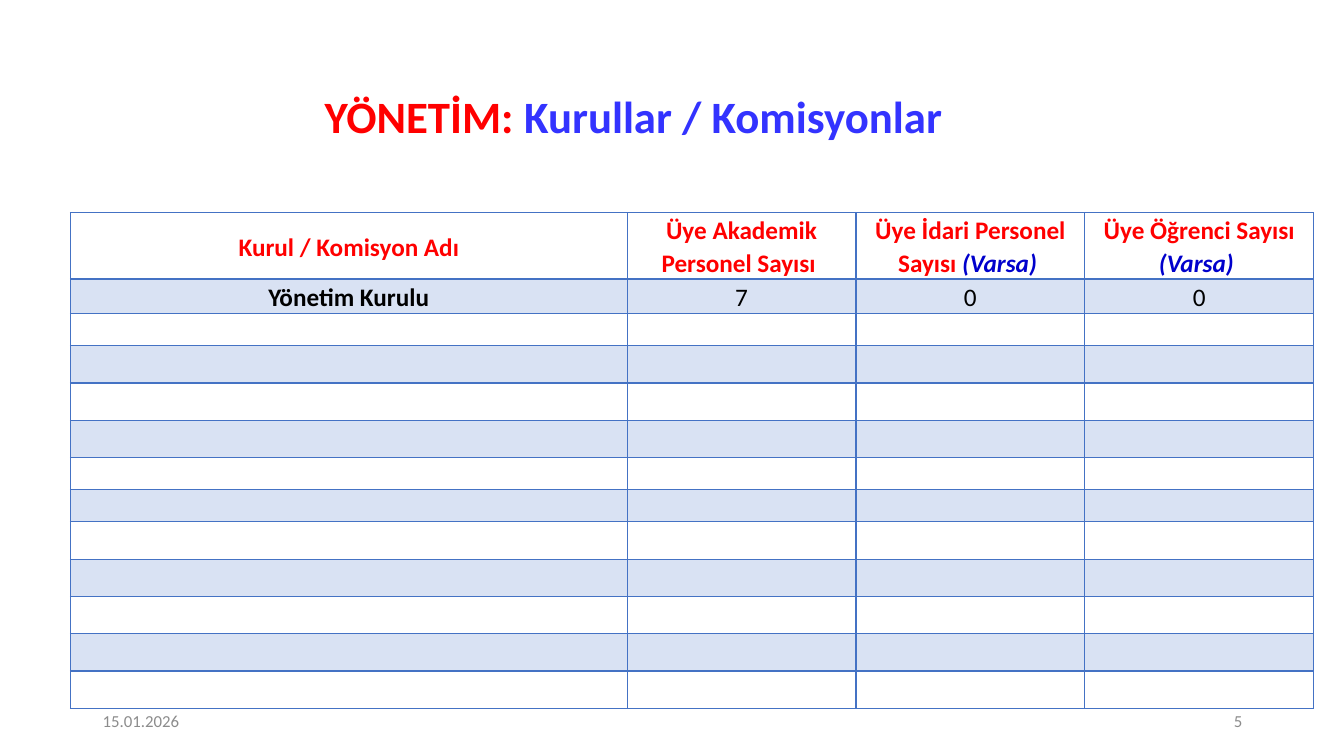
from lxml import etree
from pptx import Presentation
from pptx.dml.color import RGBColor
from pptx.enum import text
from pptx.oxml import ns
from pptx.util import Inches, Pt

RED, BLUE, NAVY, BLACK, GREY = "FF0000", "3333FF", "0000CC", "000000", "8C8C8C"
ACCENT = "4472C4"
CENTER = text.PP_ALIGN.CENTER
MIDDLE = text.MSO_ANCHOR.MIDDLE


def write(paragraph, runs, size, align, spacing=1.0):
    """Fill a paragraph with (wording, colour, bold, italic) runs."""
    paragraph.alignment = align
    paragraph.line_spacing = spacing
    for wording, colour, bold, italic in runs:
        run = paragraph.add_run()
        run.text = wording
        run.font.name = "Calibri"
        run.font.size = Pt(size)
        run.font.bold = bold
        run.font.italic = italic
        run.font.color.rgb = RGBColor.from_string(colour)


def add_border(cell, side, width):
    """Draw one accent-coloured edge of a cell."""
    line = etree.SubElement(cell._tc.get_or_add_tcPr(), ns.qn(f"a:{side}"), w=str(Pt(width)))
    fill = etree.SubElement(line, ns.qn("a:solidFill"))
    etree.SubElement(fill, ns.qn("a:srgbClr"), val=ACCENT)


presentation = Presentation()
presentation.slide_width = Inches(13.33)
presentation.slide_height = Inches(7.5)
slide = presentation.slides.add_slide(presentation.slide_layouts[6])

# Title, date and slide number
title = [("YÖNETİM: ", RED, True, False), ("Kurullar / Komisyonlar", BLUE, True, False)]
date = [("15.01.2026", GREY, False, False)]
number = [("5", GREY, False, False)]
for left, top, width, height, runs, size, align, spacing in [
    (0.7, 0.78, 11.17, 0.8, title, 32, CENTER, 0.9),
    (0.92, 6.95, 3, 0.4, date, 12, text.PP_ALIGN.LEFT, 1.0),
    (9.42, 6.95, 3, 0.4, number, 12, text.PP_ALIGN.RIGHT, 1.0),
]:
    box = slide.shapes.add_textbox(Inches(left), Inches(top), Inches(width), Inches(height))
    box.text_frame.word_wrap = True
    box.text_frame.vertical_anchor = MIDDLE
    write(box.text_frame.paragraphs[0], runs, size, align, spacing)

# Table wording; the remaining rows are left empty for filling in
optional = ("(Varsa) ", NAVY, True, True)
rows = [
    [
        [("Kurul / Komisyon Adı", RED, True, False)],
        [("Üye Akademik Personel Sayısı ", RED, True, False)],
        [("Üye İdari Personel Sayısı ", RED, True, False), optional],
        [("Üye Öğrenci Sayısı ", RED, True, False), optional],
    ],
    [[("Yönetim Kurulu", BLACK, True, False)]]
    + [[(count, BLACK, False, False)] for count in ("7", "0", "0")],
]
column_widths = [5.52, 2.27, 2.27, 2.27]
row_heights = [0.66, 0.34, 0.32] + [0.37] * 3 + [0.32] * 2 + [0.37] * 5

# Table grid
frame = slide.shapes.add_table(
    len(row_heights), len(column_widths), Inches(0.7), Inches(2.11),
    Inches(sum(column_widths)), Inches(sum(row_heights)))
table = frame.table
table.first_row = False
table.horz_banding = False
for column, width in zip(table.columns, column_widths):
    column.width = Inches(width)

# Cells: borders, banding and wording
for row_index, height in enumerate(row_heights):
    table.rows[row_index].height = Inches(height)
    for column_index in range(len(column_widths)):
        cell = table.cell(row_index, column_index)
        cell.vertical_anchor = MIDDLE
        cell.margin_left = cell.margin_right = Inches(0.01 if column_index else 0.05)
        cell.margin_top, cell.margin_bottom = Inches(0.01), 0
        for side in ("lnL", "lnR", "lnT", "lnB"):
            header_edge = (row_index, side) in ((0, "lnB"), (1, "lnT"))
            add_border(cell, side, 2 if header_edge else 1)
        if row_index % 2:
            cell.fill.solid()
            cell.fill.fore_color.rgb = RGBColor.from_string(ACCENT)
            colour = cell._tc.tcPr.find(ns.qn("a:solidFill"))[0]
            etree.SubElement(colour, ns.qn("a:alpha"), val="20000")
        else:
            cell.fill.background()
        paragraph = cell.text_frame.paragraphs[0]
        if row_index < len(rows):
            write(paragraph, rows[row_index][column_index], 18, CENTER, 1.07)
        else:
            paragraph.font.size = Pt(12)

presentation.save("out.pptx")
